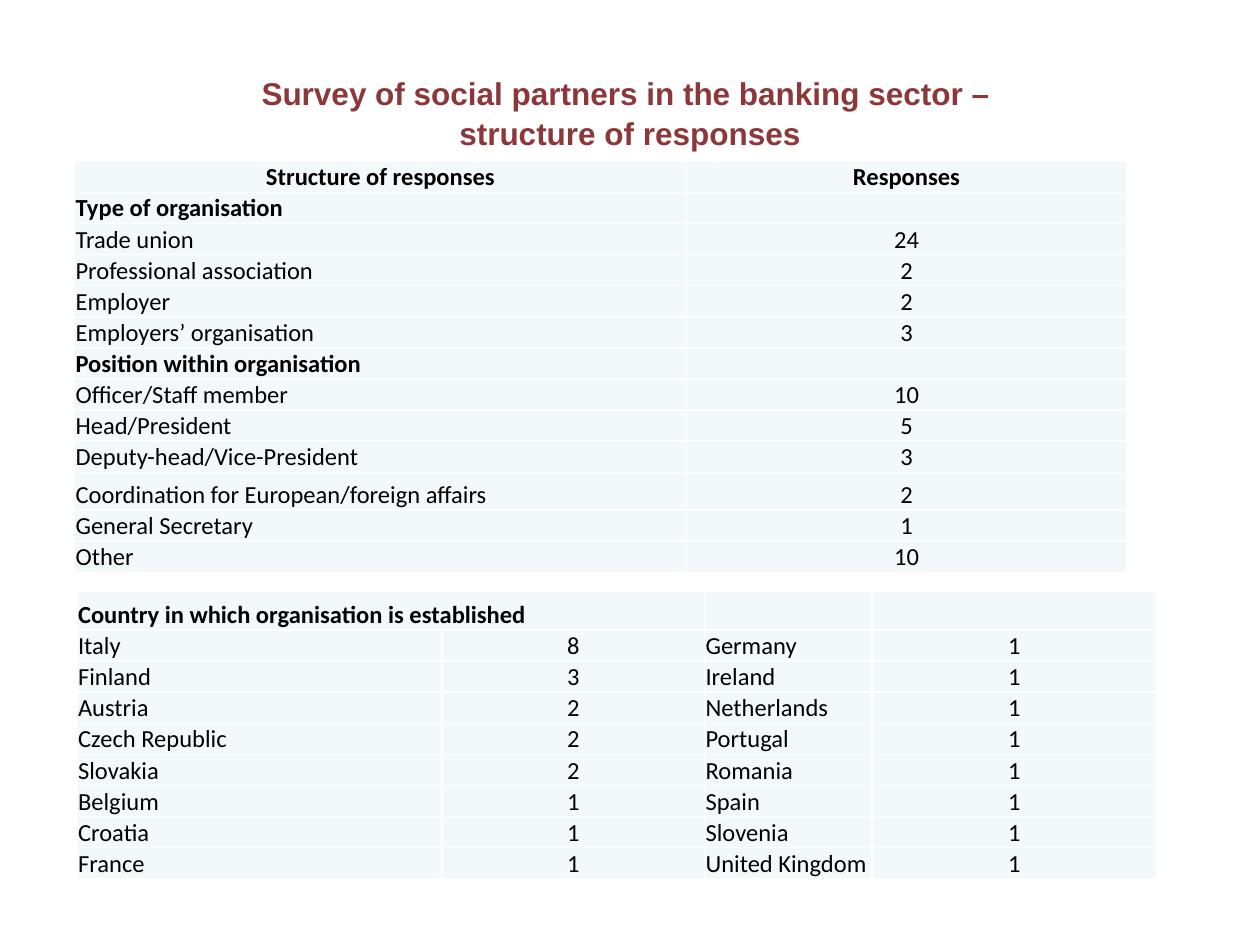
from dataclasses import dataclass

from lxml import etree
from pptx import Presentation
from pptx import util as u
from pptx.dml.color import RGBColor
from pptx.enum import text
from pptx.oxml import ns

TITLE_LINES = ["Survey of social partners in the banking sector – ",
               "structure of responses"]

RESPONSES = [
    ("Structure of responses", "Responses"),
    ("Type of organisation", ""),
    ("Trade union", "24"),
    ("Professional association", "2"),
    ("Employer", "2"),
    ("Employers’ organisation", "3"),
    ("Position within organisation", ""),
    ("Officer/Staff member", "10"),
    ("Head/President", "5"),
    ("Deputy-head/Vice-President", "3"),
    ("Coordination for European/foreign affairs", "2"),
    ("General Secretary", "1"),
    ("Other", "10"),
]

COUNTRIES = [
    ("Country in which organisation is established", "", "", ""),
    ("Italy", "8", "Germany", "1"),
    ("Finland", "3", "Ireland", "1"),
    ("Austria", "2", "Netherlands", "1"),
    ("Czech Republic", "2", "Portugal", "1"),
    ("Slovakia", "2", "Romania", "1"),
    ("Belgium", "1", "Spain", "1"),
    ("Croatia", "1", "Slovenia", "1"),
    ("France", "1", "United Kingdom", "1"),
]


@dataclass(frozen=True)
class Theme:
    title_font: str = "Arial"
    table_font: str = "Calibri"
    title_size: int = 18
    table_size: int = 14
    title_color: str = "8C383A"
    text_color: str = "000000"
    cell_fill: str = "F3F9FA"
    border_color: str = "FFFFFF"
    border_width: int = 1


THEME = Theme()
ROW_HEIGHT = 0.24


def style_run(run, font, size, color, bold):
    run.font.name = font
    run.font.size = u.Pt(size)
    run.font.bold = bold
    run.font.color.rgb = RGBColor.from_string(color)


def add_title(slide):
    title = slide.shapes.title
    title.left, title.top = u.Inches(0.5), u.Inches(0.36)
    title.width, title.height = u.Inches(9), u.Inches(0.87)
    frame = title.text_frame
    frame.word_wrap = True
    frame.auto_size = text.MSO_AUTO_SIZE.NONE
    frame.vertical_anchor = text.MSO_ANCHOR.MIDDLE
    frame.margin_top, frame.margin_bottom = u.Inches(0.19), 0
    paragraph = frame.paragraphs[0]
    paragraph.alignment = text.PP_ALIGN.CENTER
    paragraph.line_spacing = 1.05
    for index, line in enumerate(TITLE_LINES):
        if index:
            paragraph.add_line_break()
        run = paragraph.add_run()
        run.text = line
        style_run(run, THEME.title_font, THEME.title_size, THEME.title_color, True)


def add_borders(cell):
    properties = cell._tc.get_or_add_tcPr()
    for side in ("a:lnL", "a:lnR", "a:lnT", "a:lnB"):
        line = etree.SubElement(properties, ns.qn(side),
                                w=str(u.Pt(THEME.border_width)))
        fill = etree.SubElement(line, ns.qn("a:solidFill"))
        etree.SubElement(fill, ns.qn("a:srgbClr"), val=THEME.border_color)


def fill_cell(cell, content, bold, centered):
    add_borders(cell)
    cell.fill.solid()
    cell.fill.fore_color.rgb = RGBColor.from_string(THEME.cell_fill)
    cell.vertical_anchor = text.MSO_ANCHOR.BOTTOM
    cell.margin_left = cell.margin_right = cell.margin_top = u.Inches(0.01)
    cell.margin_bottom = 0
    paragraph = cell.text_frame.paragraphs[0]
    if centered:
        paragraph.alignment = text.PP_ALIGN.CENTER
    if content:
        run = paragraph.add_run()
        run.text = content
        style_run(run, THEME.table_font, THEME.table_size, THEME.text_color, bold)
    else:  # keeps an empty cell from stretching its row
        etree.SubElement(paragraph._p, ns.qn("a:endParaRPr"),
                         sz=str(THEME.table_size * 100))


def add_table(slide, rows, left, top, widths, tall_row, tall_height):
    """Label and number columns alternate; rows with no number are headings."""
    heights = [tall_height if index == tall_row else ROW_HEIGHT
               for index in range(len(rows))]
    table = slide.shapes.add_table(
        len(rows), len(widths), u.Inches(left), u.Inches(top),
        u.Inches(sum(widths)), u.Inches(sum(heights))).table
    table.first_row = table.horz_banding = False
    for column, width in zip(table.columns, widths):
        column.width = u.Inches(width)
    for r, values in enumerate(rows):
        table.rows[r].height = u.Inches(heights[r])
        bold = not values[1].isdigit()
        for c, content in enumerate(values):
            centered = c % 2 == 1 or values[1] == "Responses"
            fill_cell(table.cell(r, c), content, bold, centered)
    return table


def main():
    presentation = Presentation()
    presentation.slide_width = u.Inches(10)
    presentation.slide_height = u.Inches(7.5)
    slide = presentation.slides.add_slide(presentation.slide_layouts[5])
    add_title(slide)
    add_table(slide, RESPONSES, 0.59, 1.28, [4.86, 3.49],
              tall_row=10, tall_height=0.3)
    countries = add_table(slide, COUNTRIES, 0.61, 4.69, [2.9, 2.08, 1.33, 2.26],
                          tall_row=0, tall_height=0.31)
    countries.cell(0, 0).merge(countries.cell(0, 1))
    presentation.save("out.pptx")


if __name__ == "__main__":
    main()
